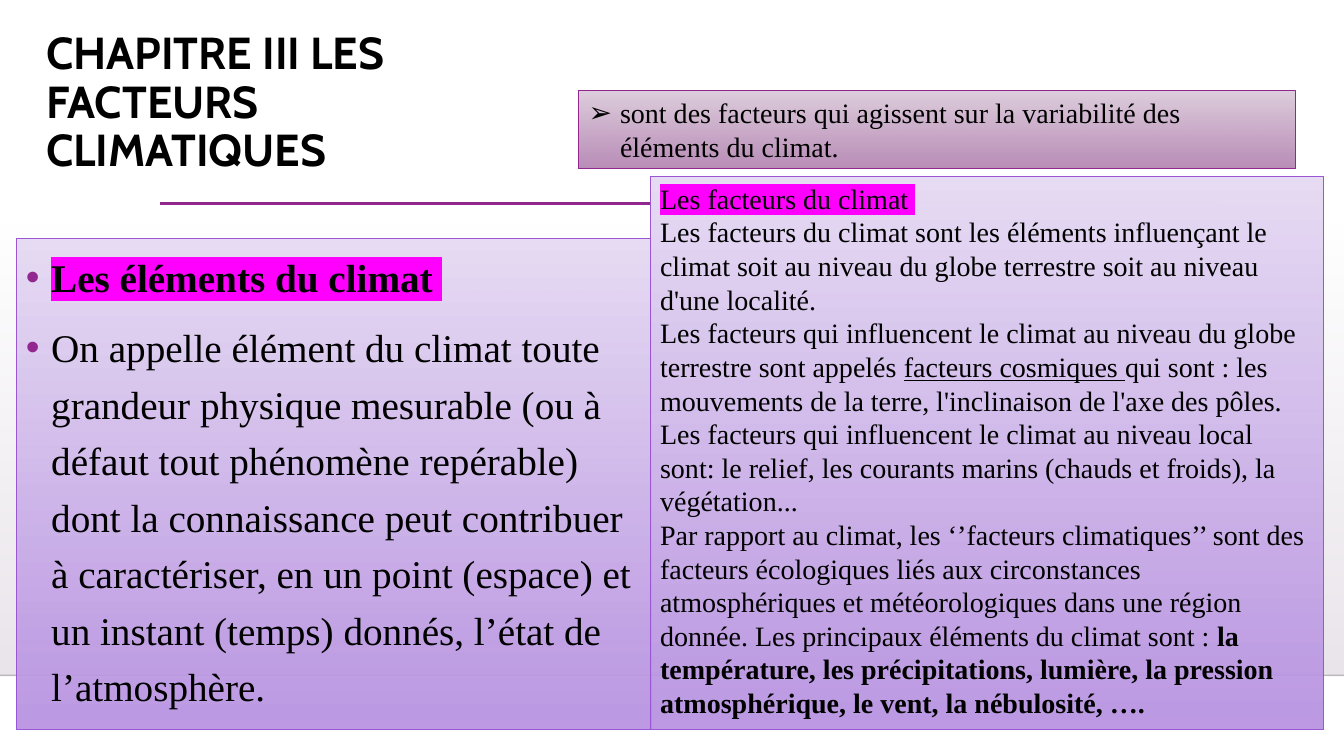
from lxml import etree
from pptx import Presentation
from pptx.dml.color import RGBColor
from pptx.enum.shapes import MSO_CONNECTOR, MSO_SHAPE
from pptx.enum.text import MSO_ANCHOR, PP_ALIGN
from pptx.oxml.ns import qn
from pptx.util import Pt

RECTANGLE = MSO_SHAPE.RECTANGLE
STRAIGHT = MSO_CONNECTOR.STRAIGHT
TOP = MSO_ANCHOR.TOP
LEFT = PP_ALIGN.LEFT

BLACK = RGBColor(0x00, 0x00, 0x00)
PURPLE = RGBColor(0x92, 0x27, 0x8F)
VIOLET = RGBColor(0x9B, 0x57, 0xD3)
MAGENTA = RGBColor(0xFF, 0x00, 0xFF)
MIST = RGBColor(0xEA, 0xE5, 0xEB)
LILAC = (RGBColor(0xE7, 0xDC, 0xF4), RGBColor(0xB7, 0x91, 0xE1))
MAUVE = (RGBColor(0xDE, 0xCE, 0xDD), RGBColor(0xB4, 0x85, 0xB2))

SERIF = "Times New Roman"
HEADING = "Cabin"


def set_opacity(parent, percent):
    """Set the opacity of every colour inside an element."""
    for colour in parent.iter(qn("a:srgbClr")):
        etree.SubElement(colour, qn("a:alpha"), val=str(percent * 1000))


def add_panel(page, box, colours, opacities, outline=None):
    """Add a rectangle shaded from top to bottom."""
    panel = page.shapes.add_shape(RECTANGLE, *map(Pt, box))
    panel.shadow.inherit = False
    panel.fill.gradient()
    panel.fill.gradient_angle = 270
    stops = panel.fill.gradient_stops
    for stop, colour in zip(stops, colours):
        stop.color.rgb = colour
    shades = panel._element.spPr.iter(qn("a:gs"))
    for shade, opacity in zip(shades, opacities):
        set_opacity(shade, opacity)
    if outline is None:
        panel.line.fill.background()
    else:
        panel.line.color.rgb = outline
        panel.line.width = Pt(0.75)
    panel.text_frame.word_wrap = True
    panel.text_frame.vertical_anchor = TOP
    return panel


def add_rule(page, left, right, height, colour, width, opacity=100):
    """Add a horizontal line without a shadow."""
    rule = page.shapes.add_connector(
        STRAIGHT, Pt(left), Pt(height), Pt(right), Pt(height))
    rule.line.color.rgb = colour
    rule.line.width = Pt(width)
    set_opacity(rule._element.spPr, opacity)
    etree.SubElement(rule._element.spPr, qn("a:effectLst"))


def add_span(para, text, size, font=SERIF, bold=False, underline=False,
             highlight=None):
    """Add one run of black text to a paragraph."""
    span = para.add_run()
    span.text = text
    span.font.size = Pt(size)
    span.font.bold = bold
    span.font.underline = underline
    span.font.color.rgb = BLACK
    span.font.name = font
    if highlight is not None:
        mark = etree.Element(qn("a:highlight"))
        etree.SubElement(mark, qn("a:srgbClr"), val=str(highlight))
        span.font._element.find(qn("a:solidFill")).addnext(mark)


def add_bullet(para, symbol, colour, indent):
    """Give a paragraph a hanging bullet."""
    properties = para._p.get_or_add_pPr()
    properties.set("marL", str(Pt(indent)))
    properties.set("indent", str(-Pt(indent)))
    tint = etree.SubElement(properties, qn("a:buClr"))
    etree.SubElement(tint, qn("a:srgbClr"), val=str(colour))
    etree.SubElement(properties, qn("a:buFont"), typeface="Arial")
    etree.SubElement(properties, qn("a:buChar"), char=symbol)


def add_paragraphs(frame, count):
    """Return the given number of left-aligned paragraphs of a frame."""
    paras = [frame.paragraphs[0]]
    paras += [frame.add_paragraph() for _ in range(count - 1)]
    for para in paras:
        para.alignment = LEFT
    return paras


def add_backdrop(page, box):
    """Add the fading floor and its lower edge."""
    left, top, width, height = box
    add_panel(page, box, (MIST, MIST), (0, 100))
    add_rule(page, left, left + width, top + height, BLACK, 1, 20)


def add_title(page, box):
    """Add the chapter title and the rule beneath it."""
    left, top, width, height = box
    add_rule(page, left + 88.6, left + 845.3, top + height + 0.7, PURPLE, 2.5)
    frame = page.shapes.add_textbox(*map(Pt, box)).text_frame
    frame.word_wrap = True
    para, = add_paragraphs(frame, 1)
    para.line_spacing = 0.9
    add_span(para, "CHAPITRE III LES FACTEURS CLIMATIQUES", 32, HEADING, True)


def add_elements(page, box):
    """Add the panel that defines the elements of climate."""
    panel = add_panel(page, box, LILAC, (100, 92), VIOLET)
    heading, definition = add_paragraphs(panel.text_frame, 2)
    for para in (heading, definition):
        add_bullet(para, "•", PURPLE, 18)
        para.line_spacing = 1.2
    definition.space_before = Pt(10)
    add_span(heading, "Les éléments du climat ", 28, bold=True,
             highlight=MAGENTA)
    add_span(definition,
             "On appelle élément du climat toute grandeur physique mesurable "
             "(ou à défaut tout phénomène repérable) dont la connaissance "
             "peut contribuer à caractériser, en un point (espace) et un "
             "instant (temps) donnés, l’état de l’atmosphère.", 28)


def add_definition(page, box):
    """Add the short definition of the factors."""
    panel = add_panel(page, box, MAUVE, (100, 92), PURPLE)
    para, = add_paragraphs(panel.text_frame, 1)
    add_bullet(para, "➢", BLACK, 22.5)
    add_span(para, "sont des facteurs qui agissent sur la variabilité des "
                   "éléments du climat.", 20)


def add_factors(page, box):
    """Add the panel that explains the factors of climate."""
    panel = add_panel(page, box, LILAC, (100, 92), VIOLET)
    heading, general, scales, ecology = add_paragraphs(panel.text_frame, 4)
    add_span(heading, "Les facteurs du climat ", 20, highlight=MAGENTA)
    add_span(general,
             "Les facteurs du climat sont les éléments influençant le climat "
             "soit au niveau du globe terrestre soit au niveau d'une "
             "localité.", 20)
    add_span(scales,
             "Les facteurs qui influencent le climat au niveau du globe "
             "terrestre sont appelés ", 20)
    add_span(scales, "facteurs cosmiques ", 20, underline=True)
    add_span(scales,
             "qui sont : les mouvements de la terre, l'inclinaison de l'axe "
             "des pôles. Les facteurs qui influencent le climat au niveau "
             "local sont: le relief, les courants marins (chauds et froids), "
             "la végétation...", 20)
    add_span(ecology,
             "Par rapport au climat, les ‘’facteurs climatiques’’ sont des "
             "facteurs écologiques liés aux circonstances atmosphériques et "
             "météorologiques dans une région donnée. Les principaux "
             "éléments du climat sont : ", 20)
    add_span(ecology,
             "la température, les précipitations, lumière, la pression "
             "atmosphérique, le vent, la nébulosité, ….", 20, bold=True)


def main():
    """Build the slide and save it."""
    deck = Presentation()
    deck.slide_width, deck.slide_height = Pt(960), Pt(540)
    page = deck.slides.add_slide(deck.slide_layouts[6])
    add_backdrop(page, (0, 159, 960, 323.4))
    add_title(page, (25.9, 18.7, 272.2, 126))
    add_elements(page, (11.5, 170.6, 453.6, 350.6))
    add_definition(page, (413.3, 64.8, 511.9, 55.4))
    add_factors(page, (464.4, 126, 481, 395.2))
    deck.save("out.pptx")


if __name__ == "__main__":
    main()
